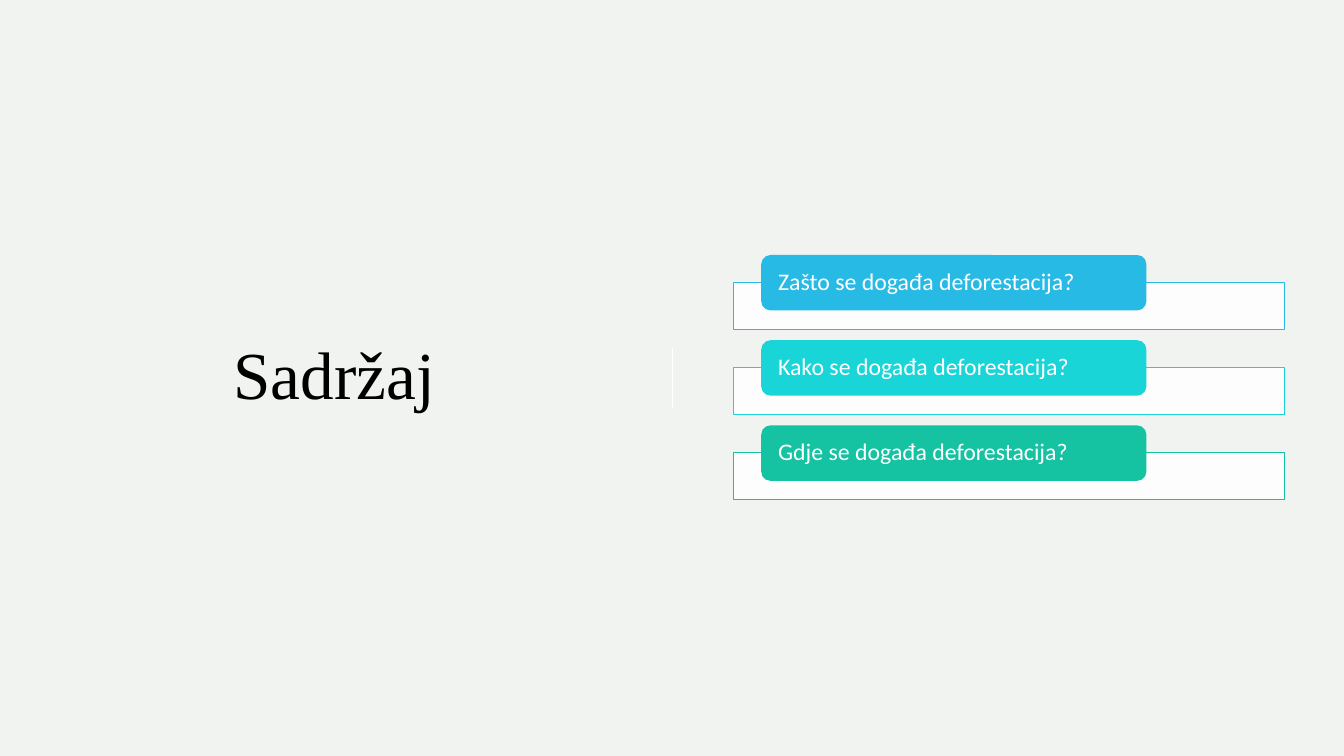
from lxml import etree
from pptx import Presentation
from pptx.dml.color import RGBColor
from pptx.enum import shapes, text
from pptx.oxml import ns
from pptx.util import Inches, Pt

BACKGROUND = RGBColor(0xF1, 0xF3, 0xF0)
WHITE = RGBColor(0xFF, 0xFF, 0xFF)
BLACK = RGBColor(0x00, 0x00, 0x00)
BLUE = RGBColor(0x27, 0xBA, 0xE4)
CYAN = RGBColor(0x19, 0xD5, 0xD8)
GREEN = RGBColor(0x15, 0xC2, 0xA1)

TITLE = "Sadržaj"
TOPICS = [
    ("Zašto se događa deforestacija?", BLUE),
    ("Kako se događa deforestacija?", CYAN),
    ("Gdje se događa deforestacija?", GREEN),
]
FIRST_TOP, ROW_PITCH = 2.53, 0.845
FRAME_OFFSET = 0.27


def format_text(shape, content, font_name, size, color, alignment):
    frame = shape.text_frame
    frame.text = content
    frame.word_wrap = True
    frame.vertical_anchor = text.MSO_ANCHOR.MIDDLE
    paragraph = frame.paragraphs[0]
    paragraph.alignment = alignment
    paragraph.line_spacing = 0.9
    font = paragraph.runs[0].font
    font.name, font.size, font.color.rgb = font_name, Pt(size), color


def add_block(slide, kind, left, top, width, height, color):
    shape = slide.shapes.add_shape(
        kind, Inches(left), Inches(top), Inches(width), Inches(height))
    shape.shadow.inherit = False
    shape.fill.solid()
    shape.fill.fore_color.rgb = color
    return shape


def add_topic(slide, top, label, color):
    frame = add_block(slide, shapes.MSO_SHAPE.RECTANGLE,
                      7.28, top + FRAME_OFFSET, 5.46, 0.47, WHITE)
    frame.line.color.rgb = color
    frame.line.width = Pt(0.75)
    fill_color = frame.fill._xPr.find(ns.qn("a:solidFill"))[0]
    etree.SubElement(fill_color, ns.qn("a:alpha"), val="90000")

    tab = add_block(slide, shapes.MSO_SHAPE.ROUNDED_RECTANGLE,
                    7.55, top, 3.82, 0.55, color)
    tab.line.fill.background()
    format_text(tab, label, "Calibri", 17, WHITE, text.PP_ALIGN.LEFT)
    tab.text_frame.margin_left = tab.text_frame.margin_right = Inches(0.14)
    tab.text_frame.margin_top = tab.text_frame.margin_bottom = 0


def main():
    presentation = Presentation()
    presentation.slide_width = Inches(13.33)
    presentation.slide_height = Inches(7.5)
    slide = presentation.slides.add_slide(presentation.slide_layouts[5])
    slide.background.fill.solid()
    slide.background.fill.fore_color.rgb = BACKGROUND

    title = slide.shapes.title
    title.left, title.top = Inches(1.18), Inches(1.18)
    title.width, title.height = Inches(4.27), Inches(5.13)
    format_text(title, TITLE, "Times New Roman", 48, BLACK, text.PP_ALIGN.CENTER)

    divider = slide.shapes.add_connector(
        shapes.MSO_CONNECTOR.STRAIGHT,
        Inches(6.67), Inches(3.45), Inches(6.67), Inches(4.05))
    divider.line.color.rgb = WHITE
    divider.line.width = Pt(1)
    etree.SubElement(divider._element.spPr, ns.qn("a:effectLst"))

    for row, (label, color) in enumerate(TOPICS):
        add_topic(slide, FIRST_TOP + row * ROW_PITCH, label, color)

    presentation.save("out.pptx")


if __name__ == "__main__":
    main()
